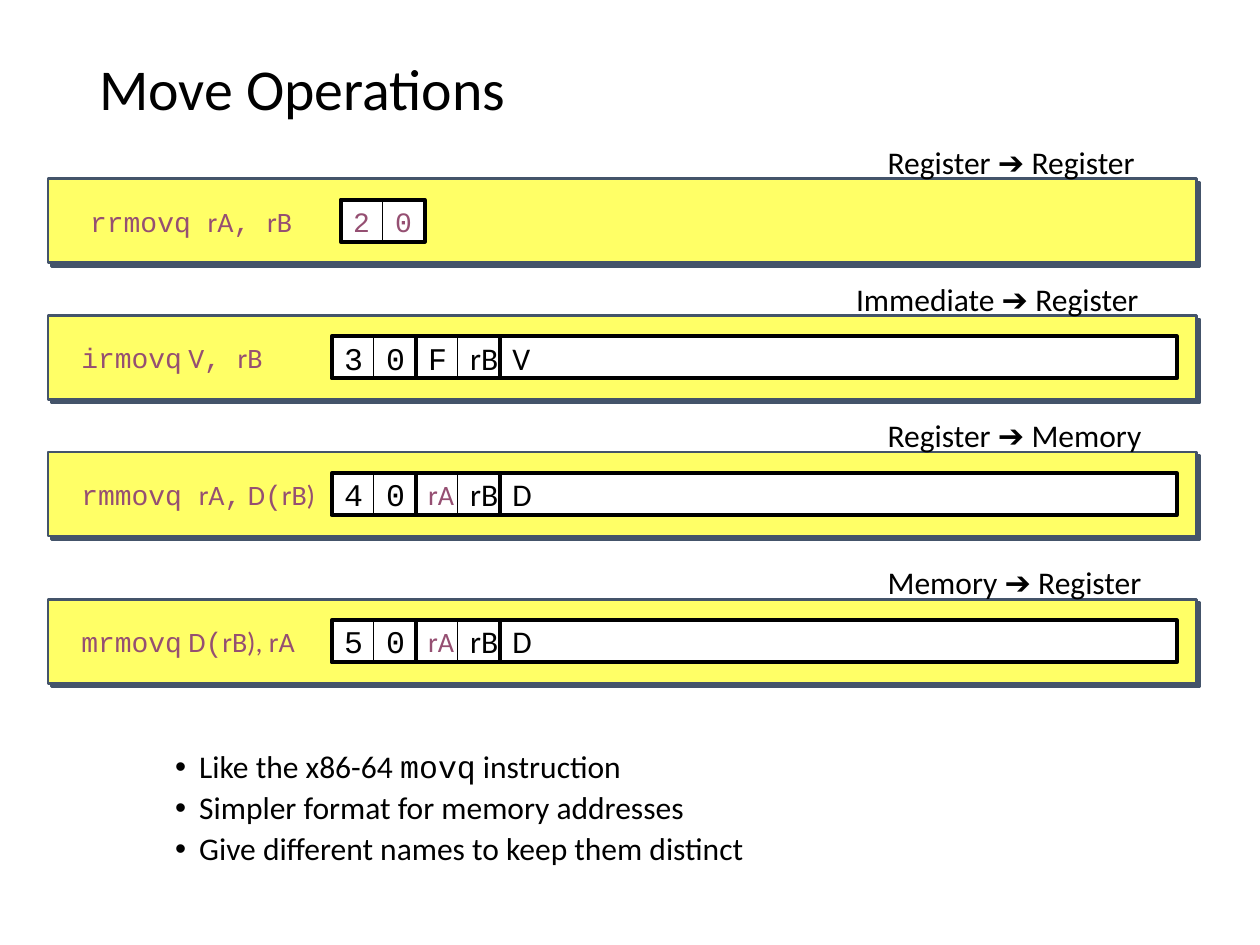
from lxml import etree
from pptx import Presentation
from pptx import util as u
from pptx.dml.color import RGBColor
from pptx.enum import shapes, text
from pptx.oxml.ns import qn

BLACK = RGBColor(0x00, 0x00, 0x00)
WHITE = RGBColor(0xFF, 0xFF, 0xFF)
YELLOW = RGBColor(0xFF, 0xFF, 0x66)
SLATE = RGBColor(0x44, 0x54, 0x6A)
PLUM = RGBColor(0x95, 0x4F, 0x72)
SANS, MONO, SYMBOL = "Calibri", "Courier New", "Arial"
UNIT = 1 / 12
MARGIN = 0.38
BAR_COLS, BAR_ROWS, CELL = 109.3, 8, 4
CODE_COL, FIELD_COL, VALUE_END = 27, 43, 107.4


class Sheet:
    def __init__(self, page):
        self.page = page

    def place(self, col, row, cols, rows):
        return (u.Inches(MARGIN + col * UNIT), u.Inches(row * UNIT),
                u.Inches(cols * UNIT), u.Inches(rows * UNIT))

    def add_spans(self, para, spans, size, color):
        for words, font in spans:
            span = para.add_run()
            span.text = words
            span.font.name = font
            span.font.size = u.Pt(size)
            span.font.color.rgb = color

    def label(self, col, row, cols, rows, spans, size, color=BLACK,
              anchor=text.MSO_ANCHOR.MIDDLE, wrap=False):
        box = self.page.shapes.add_textbox(*self.place(col, row, cols, rows))
        frame = box.text_frame
        frame.word_wrap = wrap
        frame.vertical_anchor = anchor
        self.add_spans(frame.paragraphs[0], spans, size, color)
        return frame

    def rect(self, owner, col, row, cols, rows, fill, line, weight):
        box = owner.shapes.add_shape(shapes.MSO_SHAPE.RECTANGLE,
                                     *self.place(col, row, cols, rows))
        box.shadow.inherit = False
        if fill is None:
            box.fill.background()
        else:
            box.fill.solid()
            box.fill.fore_color.rgb = fill
        box.line.color.rgb = line
        box.line.width = u.Pt(weight)
        return box

    def bar(self, row):
        box = self.rect(self.page, 0, row, BAR_COLS, BAR_ROWS, YELLOW, SLATE, 1.5)
        effects = box._element.spPr.find(qn("a:effectLst"))
        shadow = etree.SubElement(effects, qn("a:outerShdw"), dist=str(u.Pt(2.8)),
                                  dir="2700000", algn="ctr", rotWithShape="0")
        etree.SubElement(shadow, qn("a:srgbClr"), val=str(SLATE))

    def field(self, owner, col, row, cols, content, weight):
        words, font, size, color = content
        box = self.rect(owner, col, row, cols, CELL, WHITE, BLACK, weight)
        frame = box.text_frame
        frame.word_wrap = False
        frame.vertical_anchor = text.MSO_ANCHOR.MIDDLE
        para = frame.paragraphs[0]
        para.alignment = text.PP_ALIGN.LEFT
        self.add_spans(para, [(words, font)], size, color)

    def byte(self, col, row, contents):
        group = self.page.shapes.add_group_shape()
        for index, content in enumerate(contents):
            self.field(group, col + index * CELL, row, CELL, content, 0.5)
        self.rect(group, col, row, 2 * CELL, CELL, None, BLACK, 2.25)

    def caption(self, col, row, source, target):
        spans = [(source + " ", SANS), ("➔", SYMBOL), (" " + target, SANS)]
        frame = self.label(col, row, 30, 4.5, spans, 18, anchor=text.MSO_ANCHOR.TOP)
        frame.margin_left = frame.margin_right = u.Inches(0.05)
        frame.margin_top = frame.margin_bottom = u.Inches(0.05)
        frame.auto_size = text.MSO_AUTO_SIZE.SHAPE_TO_FIT_TEXT

    def bullets(self, col, row, cols, rows, items):
        frame = self.label(col, row, cols, rows, items[0], 18,
                           anchor=text.MSO_ANCHOR.TOP, wrap=True)
        for spans in items[1:]:
            self.add_spans(frame.add_paragraph(), spans, 18, BLACK)
        for para in frame.paragraphs:
            para.level = 1
            para.line_spacing = 0.9
            para.space_before = u.Pt(3.8)
            props = para._p.get_or_add_pPr()
            props.set("marL", str(u.Inches(0.56)))
            props.set("indent", str(u.Inches(-0.19)))
            etree.SubElement(props, qn("a:buFont"), typeface=SYMBOL)
            etree.SubElement(props, qn("a:buChar"), char="•")

    def instruction(self, row, caption_col, source, target, syntax,
                    code, operands=(), value=None, shift=0, code_style=(18, BLACK)):
        self.bar(row)
        self.caption(caption_col, row - 4, source, target)
        self.label(2 + shift, row + 2, 25, CELL, syntax, 16, PLUM)
        self.byte(CODE_COL + shift, row + 2,
                  [(digit, MONO, *code_style) for digit in code])
        if operands:
            self.byte(CODE_COL + 2 * CELL, row + 2, operands)
        if value:
            self.field(self.page, FIELD_COL, row + 2, VALUE_END - FIELD_COL,
                       (value, SANS, 18, BLACK), 2.25)


def main():
    deck = Presentation()
    deck.slide_width, deck.slide_height = u.Inches(9.99), u.Inches(7.49)
    page = deck.slides.add_slide(deck.slide_layouts[6])
    sheet = Sheet(page)

    title = sheet.label(3.7, 0, 103.3, 17.4, [("Move Operations", SANS)], 33, wrap=True)
    title.paragraphs[0].line_spacing = 0.9

    no_register = ("F", MONO, 18, BLACK)
    register_a = ("rA", SANS, 16, PLUM)
    register_b = ("rB", SANS, 18, BLACK)

    sheet.instruction(
        17, 79.3, "Register", "Register",
        [("rrmovq ", MONO), ("rA", SANS), (", ", MONO), ("rB", SANS)],
        "20", shift=0.85, code_style=(16, PLUM))
    sheet.instruction(
        30, 76.3, "Immediate", "Register",
        [("irmovq", MONO), (" V", SANS), (", ", MONO), ("rB", SANS)],
        "30", (no_register, register_b), "V")
    sheet.instruction(
        43, 79.3, "Register", "Memory",
        [("rmmovq ", MONO), ("rA", SANS), (",", MONO), (" D", SANS),
         ("(", MONO), ("rB)", SANS)],
        "40", (register_a, register_b), "D")
    sheet.instruction(
        57, 79.3, "Memory", "Register",
        [("mrmovq", MONO), (" D", SANS), ("(", MONO), ("rB), rA", SANS)],
        "50", (register_a, register_b), "D")

    sheet.bullets(6.5, 70.9, 101, 16.6, [
        [("Like the x86-64 ", SANS), ("movq", MONO), (" instruction", SANS)],
        [("Simpler format for memory addresses", SANS)],
        [("Give different names to keep them distinct", SANS)],
    ])
    deck.save("out.pptx")


if __name__ == "__main__":
    main()
